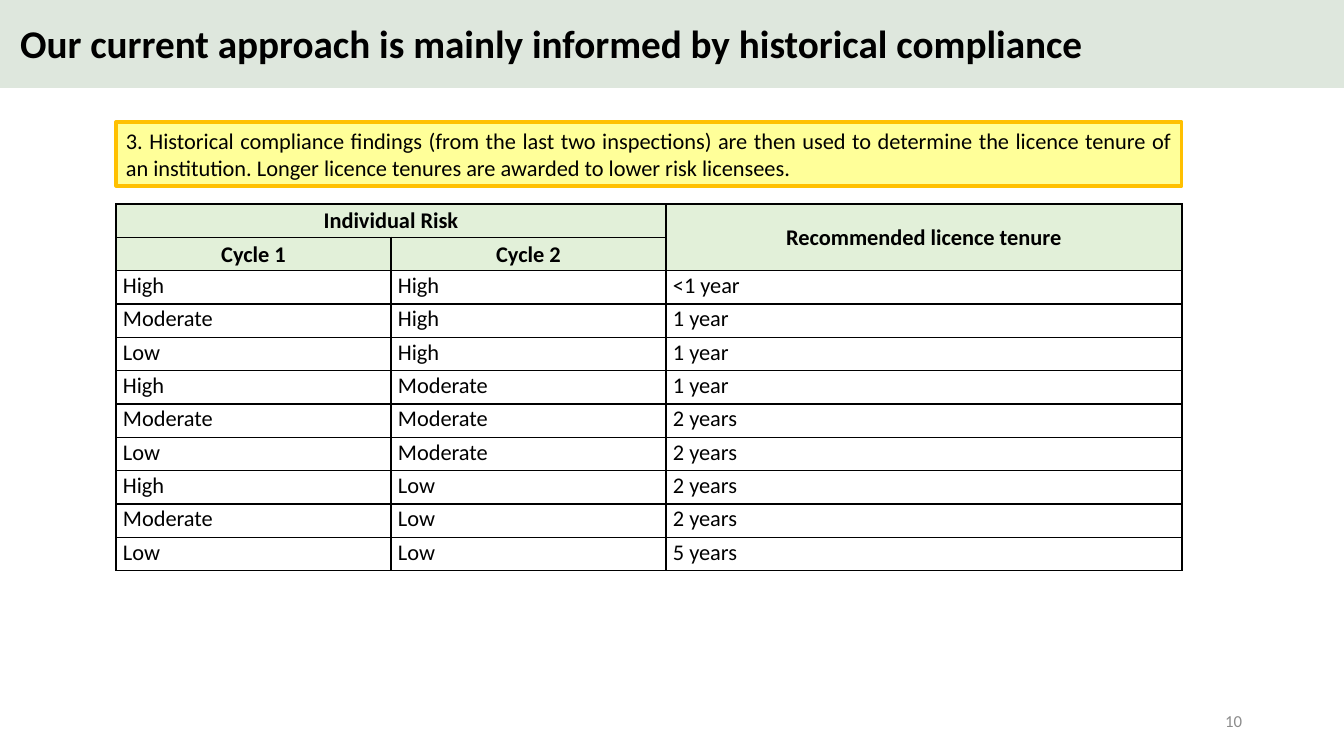
import pptx
import pptx.dml.color
import pptx.enum.shapes
import pptx.enum.text
import pptx.oxml
import pptx.oxml.ns
import pptx.util

EMU_PER_PX = 914400 / 100.8
ALIGN = pptx.enum.text.PP_ALIGN
MIDDLE = pptx.enum.text.MSO_ANCHOR.MIDDLE
HEADERS = [["Individual Risk", "", "Recommended licence tenure"], ["Cycle 1", "Cycle 2", ""]]
TENURES = [
    ["High", "High", "<1 year"],
    ["Moderate", "High", "1 year"],
    ["Low", "High", "1 year"],
    ["High", "Moderate", "1 year"],
    ["Moderate", "Moderate", "2 years"],
    ["Low", "Moderate", "2 years"],
    ["High", "Low", "2 years"],
    ["Moderate", "Low", "2 years"],
    ["Low", "Low", "5 years"],
]


def px(length):
    """Turn pixels into EMU."""
    return pptx.util.Emu(round(length * EMU_PER_PX))


def color(hex_code):
    """Turn a hex string into a colour."""
    return pptx.dml.color.RGBColor.from_string(hex_code)


def write(frame, text, size, align, bold=False, ink="000000"):
    """Fill a text frame with one formatted paragraph and return it."""
    frame.text = text
    paragraph = frame.paragraphs[0]
    paragraph.alignment = align
    for run in paragraph.runs:
        run.font.name = "Calibri"
        run.font.size = pptx.util.Pt(size)
        run.font.bold = bold
        run.font.color.rgb = color(ink)
    return paragraph


def add_box(slide, box, fill, line=None):
    """Add a flat rectangle with an optional outline."""
    rectangle = slide.shapes.add_shape(
        pptx.enum.shapes.MSO_SHAPE.RECTANGLE, *map(px, box))
    rectangle.shadow.inherit = False
    rectangle.fill.solid()
    rectangle.fill.fore_color.rgb = color(fill)
    if line:
        rectangle.line.color.rgb = color(line)
        rectangle.line.width = pptx.util.Pt(2.25)
    else:
        rectangle.line.fill.background()
    return rectangle


def add_heading(slide, box, text):
    """Place the title over a banner that fills the box."""
    left, top, width, height = box
    banner = add_box(slide, box, "DEE7DD")
    title = slide.shapes.title
    title.element.addprevious(banner.element)
    title.left, title.top = px(left + 10), px(top + 9)
    title.width, title.height = px(width - 22), px(height - 15)
    title.text_frame.vertical_anchor = MIDDLE
    title.text_frame.word_wrap = True
    write(title.text_frame, text, 28, ALIGN.LEFT, True).line_spacing = 0.9


def add_finding(slide, box, text):
    """Add the highlighted statement."""
    finding = add_box(slide, box, "FFFF99", "FFC000")
    finding.text_frame.word_wrap = True
    finding.text_frame.vertical_anchor = pptx.enum.text.MSO_ANCHOR.TOP
    write(finding.text_frame, text, 16, ALIGN.JUSTIFY)


def add_borders(cell):
    """Draw a thin black line on all four sides of a cell."""
    properties = cell._tc.get_or_add_tcPr()
    for position, side in enumerate(("lnL", "lnR", "lnT", "lnB")):
        properties.insert(position, pptx.oxml.parse_xml(
            f'<a:{side} {pptx.oxml.ns.nsdecls("a")} w="12700"><a:solidFill>'
            f'<a:srgbClr val="000000"/></a:solidFill></a:{side}>'))


def format_cell(cell, text, is_header):
    """Write and style one table cell."""
    cell.margin_left = cell.margin_right = px(7)
    cell.margin_top = cell.margin_bottom = 0
    if is_header:
        cell.vertical_anchor = MIDDLE
        cell.fill.solid()
        cell.fill.fore_color.rgb = color("E2F0D9")
    else:
        cell.fill.background()
    paragraph = write(cell.text_frame, text, 16,
                      ALIGN.CENTER if is_header else ALIGN.LEFT, is_header)
    paragraph.line_spacing = 1.05
    paragraph.space_after = pptx.util.Pt(8)
    add_borders(cell)


def add_tenure_table(slide, box):
    """Add the table of risk ratings and licence tenures."""
    rows = HEADERS + TENURES
    cycle_width = 275
    column_widths = [cycle_width, cycle_width, box[2] - 2 * cycle_width]
    table = slide.shapes.add_table(len(rows), len(column_widths), *map(px, box)).table
    table.horz_banding = False
    for column, width in zip(table.columns, column_widths):
        column.width = px(width)
    for row_index, texts in enumerate(rows):
        table.rows[row_index].height = px(box[3] / len(rows))
        for column_index, text in enumerate(texts):
            format_cell(table.cell(row_index, column_index), text, row_index < len(HEADERS))
    table.cell(0, 0).merge(table.cell(0, 1))
    table.cell(0, 2).merge(table.cell(1, 2))


def add_page_number(slide, box, number):
    """Add the page number at the right of its box."""
    frame = slide.shapes.add_textbox(*map(px, box)).text_frame
    frame.word_wrap = True
    frame.vertical_anchor = MIDDLE
    write(frame, number, 12, ALIGN.RIGHT, ink="8C8C8C")


def main():
    """Build and save the slide."""
    deck = pptx.Presentation()
    deck.slide_width, deck.slide_height = px(1344), px(756)
    slide = deck.slides.add_slide(deck.slide_layouts[5])
    add_heading(slide, (0, 0, 1344, 88),
                "Our current approach is mainly informed by historical compliance")
    add_finding(slide, (116, 122, 1066, 64),
                "3. Historical compliance findings (from the last two inspections) are then used "
                "to determine the licence tenure of an institution. Longer licence tenures are "
                "awarded to lower risk licensees.")
    add_page_number(slide, (950, 701, 302, 40), "10")
    add_tenure_table(slide, (116, 204, 1066, 367))
    deck.save("out.pptx")


if __name__ == "__main__":
    main()
